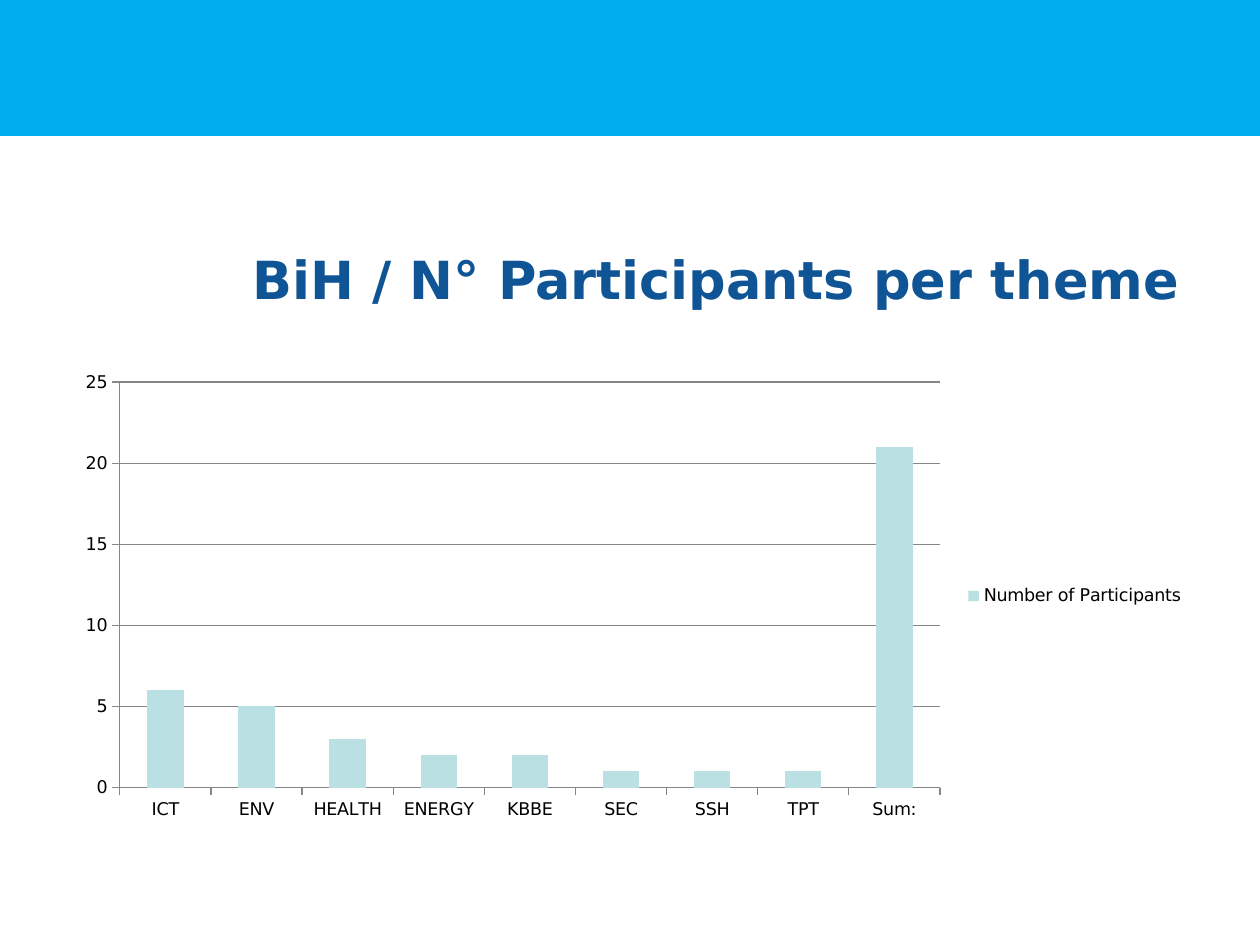
from dataclasses import dataclass

from pptx import Presentation
from pptx import util as u
from pptx.chart import data as chart_data
from pptx.dml.color import RGBColor
from pptx.enum import chart as ch
from pptx.enum import shapes, text

EMU_PER_PX = 914400 / 126
SLIDE_SIZE = (1260, 945)
BANNER_BOX = (0, 0, 1260, 136)
TITLE_BOX = (64, 214, 1134, 129)
CHART_BOX = (63, 363, 1134, 466)
TITLE_INDENT = 176

PARTICIPANTS = {
    "ICT": 6, "ENV": 5, "HEALTH": 3, "ENERGY": 2, "KBBE": 2,
    "SEC": 1, "SSH": 1, "TPT": 1, "Sum:": 21,
}


@dataclass(frozen=True)
class Theme:
    """Colours, font and type sizes of the slide."""
    banner: RGBColor = RGBColor.from_string("00AEF0")
    title: RGBColor = RGBColor.from_string("0F5494")
    bars: RGBColor = RGBColor.from_string("BBE0E3")
    labels: RGBColor = RGBColor.from_string("000000")
    rules: RGBColor = RGBColor.from_string("868686")
    font: str = "DejaVu Sans"
    title_size: int = 30
    label_size: int = 10


THEME = Theme()


def px(length):
    """Turn pixels into EMU."""
    return u.Emu(round(length * EMU_PER_PX))


def emu_box(box):
    """Turn a pixel box into EMU lengths."""
    return [px(length) for length in box]


def style_font(font, size, color, bold=False):
    """Apply the theme font with a size and colour."""
    font.name = THEME.font
    font.size = u.Pt(size)
    font.bold = bold
    font.color.rgb = color


def add_banner(slide, box):
    """Draw the coloured band across the top."""
    banner = slide.shapes.add_shape(shapes.MSO_SHAPE.RECTANGLE, *emu_box(box))
    banner.shadow.inherit = False
    banner.fill.solid()
    banner.fill.fore_color.rgb = THEME.banner
    banner.line.fill.background()


def add_title(slide, box):
    """Write the indented heading, centred vertically in its box."""
    frame = slide.shapes.add_textbox(*emu_box(box)).text_frame
    frame.word_wrap = True
    frame.vertical_anchor = text.MSO_ANCHOR.MIDDLE
    heading = frame.paragraphs[0]
    heading.text = "BiH / N° Participants per theme"
    heading.alignment = text.PP_ALIGN.LEFT
    heading_properties = heading._p.get_or_add_pPr()
    heading_properties.set("marL", str(px(TITLE_INDENT)))
    heading_properties.set("indent", "0")
    style_font(heading.runs[0].font, THEME.title_size, THEME.title, True)


def add_participants_chart(slide, box):
    """Plot the number of participants for each theme."""
    counts = chart_data.CategoryChartData(number_format="#,##0")
    counts.categories = list(PARTICIPANTS)
    counts.add_series("Number of Participants", list(PARTICIPANTS.values()))
    chart = slide.shapes.add_chart(
        ch.XL_CHART_TYPE.COLUMN_CLUSTERED, *emu_box(box), counts).chart
    style_font(chart.font, THEME.label_size, THEME.labels)
    chart.has_title = False
    chart.has_legend = True
    chart.legend.position = ch.XL_LEGEND_POSITION.RIGHT
    chart.legend.include_in_layout = False

    columns = chart.plots[0]
    columns.gap_width = 150
    columns.vary_by_categories = False
    bars = columns.series[0].format.fill
    bars.solid()
    bars.fore_color.rgb = THEME.bars

    counts_axis = chart.value_axis
    counts_axis.minimum_scale = 0
    counts_axis.maximum_scale = 25
    counts_axis.major_unit = 5
    counts_axis.has_major_gridlines = True
    counts_axis.tick_labels.number_format = "#,##0"
    counts_axis.tick_labels.number_format_is_linked = False
    for axis in (chart.category_axis, counts_axis):
        axis.major_tick_mark = ch.XL_TICK_MARK.OUTSIDE
    for ruled in (chart.category_axis, counts_axis, counts_axis.major_gridlines):
        ruled.format.line.color.rgb = THEME.rules
        ruled.format.line.width = u.Pt(0.75)


def main():
    """Build and save the slide."""
    deck = Presentation()
    deck.slide_width, deck.slide_height = emu_box(SLIDE_SIZE)
    slide = deck.slides.add_slide(deck.slide_layouts[6])
    add_banner(slide, BANNER_BOX)
    add_title(slide, TITLE_BOX)
    add_participants_chart(slide, CHART_BOX)
    deck.save("out.pptx")


if __name__ == "__main__":
    main()
